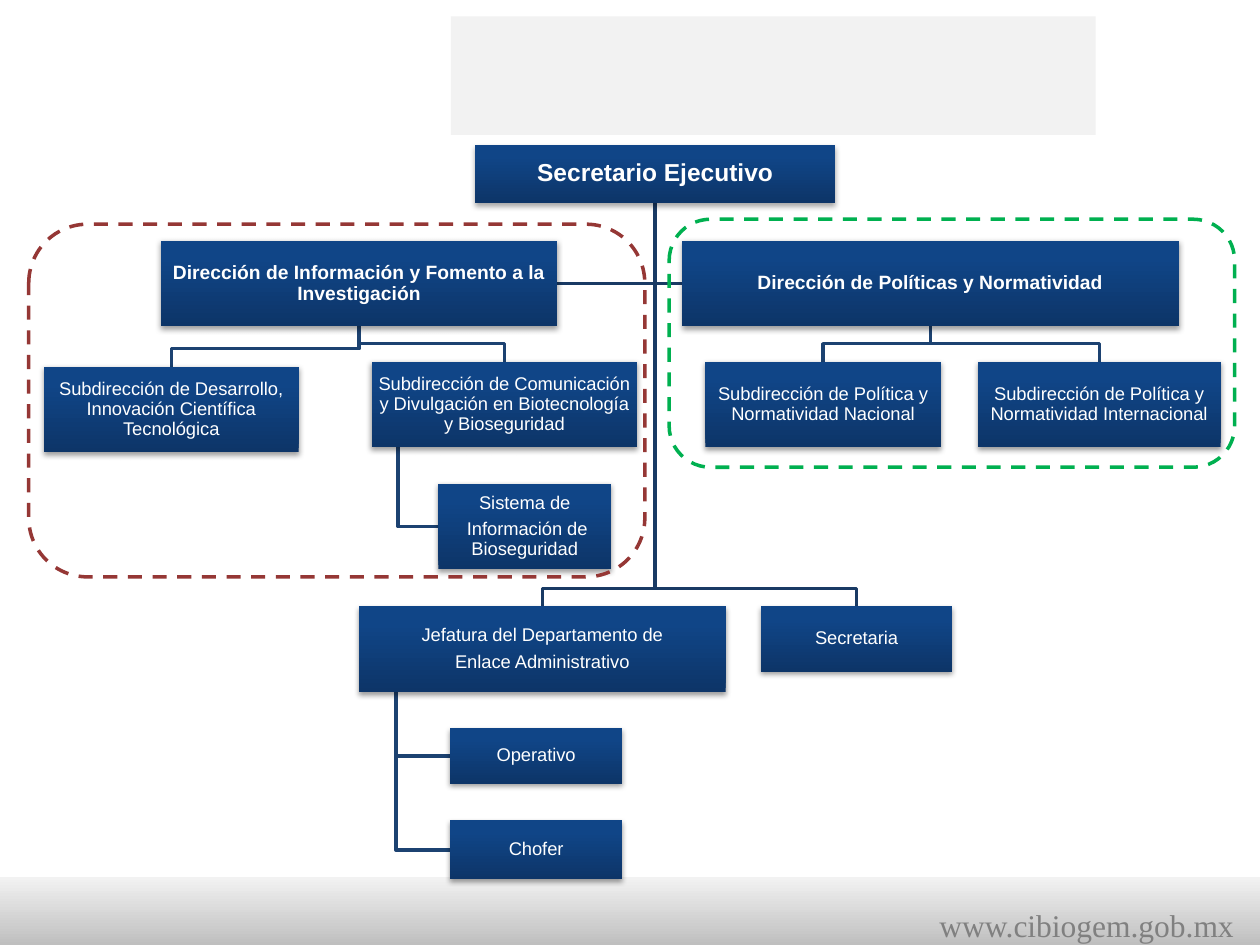
from dataclasses import dataclass

from lxml.etree import SubElement
from pptx import Presentation
from pptx.dml.color import RGBColor
from pptx.enum.dml import MSO_LINE
from pptx.enum.shapes import MSO_SHAPE
from pptx.enum.text import MSO_ANCHOR, PP_ALIGN
from pptx.oxml.ns import qn
from pptx.util import Cm, Pt

BOX_STOPS = ((0, "0D3568"), (80, "104587"), (100, "0E458A"))
FOOTER_STOPS = ((0, "BFBFBF"), (100, "F2F2F2"))
EXECUTIVE_LINE = "193A64"
BRANCH_LINE = "1C4271"
ELBOW_DROP = 0.36
HANG_SHARE = 0.1


@dataclass(frozen=True)
class Box:
    """Rectangle in centimetres with its label."""

    left: float
    top: float
    width: float
    height: float
    text: str = ""
    size: float = 10.5
    bold: bool = False
    shadow_alpha: int = 38
    shadow_distance: float = 1.57

    @property
    def right(self) -> float:
        return self.left + self.width

    @property
    def bottom(self) -> float:
        return self.top + self.height

    @property
    def center(self) -> float:
        return self.left + self.width / 2

    @property
    def middle(self) -> float:
        return self.top + self.height / 2


EXECUTIVE = Box(9.58, 2.92, 7.26, 1.17, "Secretario Ejecutivo", 14, True, 35, 1.81)
ADMINISTRATION = Box(7.24, 12.22, 7.39, 1.73, "Jefatura del Departamento de\nEnlace Administrativo")
OPERATIVE = Box(9.07, 14.68, 3.48, 1.12, "Operativo")
DRIVER = Box(9.07, 16.54, 3.48, 1.19, "Chofer")
SECRETARY = Box(15.34, 12.22, 3.86, 1.32, "Secretaria")
INFORMATION = Box(3.25, 4.85, 7.98, 1.73,
                  "Dirección de Información y Fomento a la Investigación", 11, True)
DEVELOPMENT = Box(0.89, 7.39, 5.13, 1.73,
                  "Subdirección de Desarrollo, Innovación Científica Tecnológica")
COMMUNICATION = Box(7.49, 7.29, 5.36, 1.73,
                    "Subdirección de Comunicación y Divulgación en Biotecnología y Bioseguridad")
SYSTEM = Box(8.84, 9.75, 3.48, 1.73, "Sistema de\n Información de Bioseguridad")
POLICY = Box(13.74, 4.85, 10.03, 1.73, "Dirección de Políticas y Normatividad", 11, True)
NATIONAL = Box(14.22, 7.29, 4.75, 1.73, "Subdirección de Política y Normatividad Nacional")
INTERNATIONAL = Box(19.71, 7.29, 4.9, 1.73,
                    "Subdirección de Política y Normatividad Internacional")
BOXES = (EXECUTIVE, ADMINISTRATION, OPERATIVE, DRIVER, SECRETARY, INFORMATION,
         DEVELOPMENT, COMMUNICATION, SYSTEM, POLICY, NATIONAL, INTERNATIONAL)

HEADER = Box(9.09, 0.33, 13, 2.39)
FOOTER = Box(0, 17.68, 25.4, 1.37)
ADDRESS = Box(18.69, 18.14, 6.55, 1.02, "www.cibiogem.gob.mx")
FRAMES = ((Box(0.58, 4.52, 12.42, 7.11), "953735"), (Box(13.49, 4.42, 11.4, 5), "00B050"))

DROPS = (
    (POLICY, INTERNATIONAL, BRANCH_LINE),
    (POLICY, NATIONAL, BRANCH_LINE),
    (INFORMATION, COMMUNICATION, BRANCH_LINE),
    (INFORMATION, DEVELOPMENT, BRANCH_LINE),
    (EXECUTIVE, SECRETARY, EXECUTIVE_LINE),
    (EXECUTIVE, ADMINISTRATION, EXECUTIVE_LINE),
)
HANGS = ((COMMUNICATION, SYSTEM), (ADMINISTRATION, DRIVER), (ADMINISTRATION, OPERATIVE))


def color(value: str) -> RGBColor:
    """Turn a hex string into a colour."""
    return RGBColor.from_string(value)


def add_block(slide, box: Box, kind=MSO_SHAPE.RECTANGLE):
    """Add a plain preset shape without line, fill or shadow."""
    shape = slide.shapes.add_shape(kind, Cm(box.left), Cm(box.top), Cm(box.width), Cm(box.height))
    shape.shadow.inherit = False
    shape.fill.background()
    shape.line.fill.background()
    return shape


def set_gradient(shape, stops) -> None:
    """Fill a shape with a gradient that runs from bottom to top."""
    shape.fill.gradient()
    shape.fill.gradient_angle = 90
    stop_list = shape.element.spPr.find(qn("a:gradFill")).find(qn("a:gsLst"))
    for stop in list(stop_list):
        stop_list.remove(stop)
    for position, value in stops:
        stop = SubElement(stop_list, qn("a:gs"), pos=str(position * 1000))
        SubElement(stop, qn("a:srgbClr"), val=value)


def set_shadow(shape, box: Box) -> None:
    """Cast a soft black shadow straight down."""
    effects = shape.element.spPr.find(qn("a:effectLst"))
    shadow = SubElement(effects, qn("a:outerShdw"), blurRad=str(Pt(3.15)),
                        dist=str(Pt(box.shadow_distance)), dir="5400000", rotWithShape="0")
    black = SubElement(shadow, qn("a:srgbClr"), val="000000")
    SubElement(black, qn("a:alpha"), val=str(box.shadow_alpha * 1000))


def add_box(slide, box: Box) -> None:
    """Add one labelled box of the chart."""
    shape = add_block(slide, box)
    set_gradient(shape, BOX_STOPS)
    set_shadow(shape, box)
    frame = shape.text_frame
    frame.word_wrap = True
    frame.vertical_anchor = MSO_ANCHOR.MIDDLE
    frame.margin_left = frame.margin_right = frame.margin_top = frame.margin_bottom = Cm(0.03)
    frame.text = box.text
    for paragraph in frame.paragraphs:
        paragraph.alignment = PP_ALIGN.CENTER
        paragraph.line_spacing = 0.9
        paragraph.space_after = Pt(box.size * 0.35)
        for run in paragraph.runs:
            run.font.name = "Arial"
            run.font.size = Pt(box.size)
            run.font.bold = box.bold
            run.font.color.rgb = color("FFFFFF")


def add_elbow(slide, points, line: str) -> None:
    """Draw an open angled line through the points."""
    start, *others = [(Cm(x), Cm(y)) for x, y in points]
    builder = slide.shapes.build_freeform(*start)
    builder.add_line_segments(others, close=False)
    shape = builder.convert_to_shape()
    shape.shadow.inherit = False
    shape.fill.background()
    shape.line.color.rgb = color(line)
    shape.line.width = Pt(2)


def add_drop(slide, parent: Box, child: Box, line: str) -> None:
    """Join the bottom of a parent with the top of its child."""
    turn = child.top - ELBOW_DROP
    add_elbow(slide, ((parent.center, parent.bottom), (parent.center, turn),
                      (child.center, turn), (child.center, child.top)), line)


def add_side(slide, parent: Box, start: float, child: Box, end: float, line: str) -> None:
    """Join the bottom of a parent with the side of its child."""
    add_elbow(slide, ((start, parent.bottom), (start, child.middle), (end, child.middle)), line)


def add_address(slide, box: Box) -> None:
    """Add the web address in the footer."""
    shape = slide.shapes.add_textbox(Cm(box.left), Cm(box.top), Cm(box.width), Cm(box.height))
    shape.text_frame.word_wrap = False
    shape.text_frame.text = box.text
    font = shape.text_frame.paragraphs[0].runs[0].font
    font.name = "Times New Roman"
    font.size = Pt(18)
    font.color.rgb = color("808080")


def main() -> None:
    """Build and save the organisation chart."""
    presentation = Presentation()
    presentation.slide_width, presentation.slide_height = Cm(25.4), Cm(19.05)
    slide = presentation.slides.add_slide(presentation.slide_layouts[6])
    header = add_block(slide, HEADER)
    header.fill.solid()
    header.fill.fore_color.rgb = color("F2F2F2")
    set_gradient(add_block(slide, FOOTER), FOOTER_STOPS)
    add_address(slide, ADDRESS)
    for parent, child, line in DROPS:
        add_drop(slide, parent, child, line)
    for parent, child in HANGS:
        start = parent.left + parent.width * HANG_SHARE
        add_side(slide, parent, start, child, child.left, BRANCH_LINE)
    for child, end in ((INFORMATION, INFORMATION.right), (POLICY, POLICY.left)):
        add_side(slide, EXECUTIVE, EXECUTIVE.center, child, end, EXECUTIVE_LINE)
    for box in BOXES:
        add_box(slide, box)
    for frame, line in FRAMES:
        shape = add_block(slide, frame, MSO_SHAPE.ROUNDED_RECTANGLE)
        shape.line.color.rgb = color(line)
        shape.line.width = Pt(2)
        shape.line.dash_style = MSO_LINE.DASH
    presentation.save("out.pptx")


if __name__ == "__main__":
    main()
